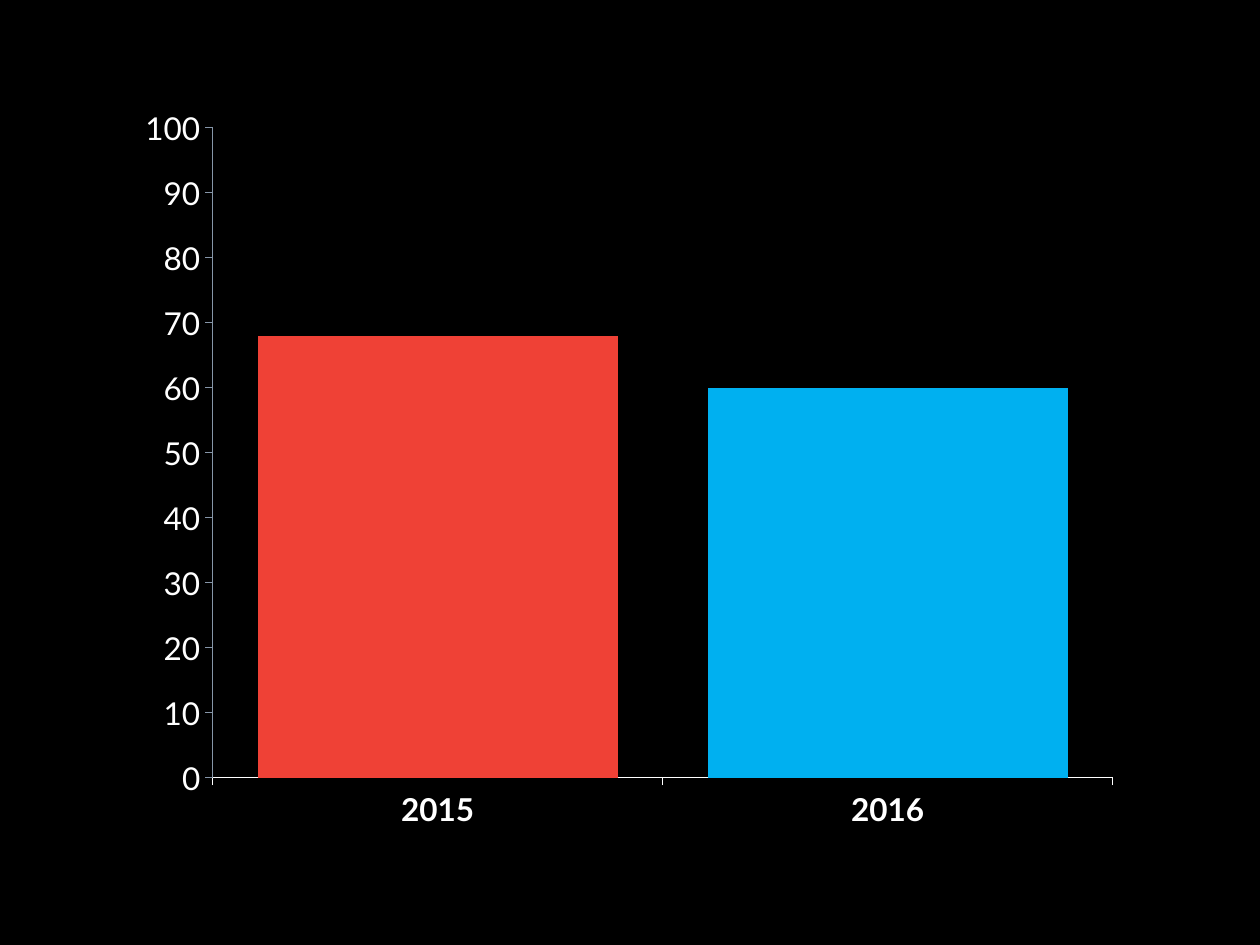
from lxml.etree import SubElement, Element
from pptx import Presentation
from pptx.chart.data import CategoryChartData as Data
from pptx.dml.color import RGBColor
from pptx.enum.chart import XL_CHART_TYPE as Kind, XL_TICK_MARK as Tick
from pptx.oxml.ns import qn
from pptx.util import Pt

PX = 914400 // 126
WHITE, BLACK, RED, BLUE, GREY = "FFFFFF", "000000", "EF4136", "00B0F0", "8696A8"


def px(n):
    return round(n * PX)


def paint(fill, tone):
    fill.solid()
    fill.fore_color.rgb = RGBColor.from_string(tone)


def style(item, values):
    for name, value in values.items():
        setattr(item, name, value)


def set_font(font, bold=False):
    style(font, {"name": "Lato", "size": Pt(18), "bold": bold})
    font.color.rgb = RGBColor.from_string(WHITE)


def set_axis(axis, tone, bold, values):
    style(axis, {"has_major_gridlines": False, "major_tick_mark": Tick.OUTSIDE,
                 "minor_tick_mark": Tick.NONE, **values})
    set_font(axis.tick_labels.font, bold)
    axis.format.line.width = Pt(0.75)
    paint(axis.format.line.fill, tone)


def set_plot(chart, box):
    area = chart._chartSpace.chart.plotArea
    for old in area.findall(qn("c:layout")):
        area.remove(old)
    layout = Element(qn("c:layout"))
    area.insert(0, layout)
    manual = SubElement(layout, qn("c:manualLayout"))
    parts = {"layoutTarget": "inner", "xMode": "edge", "yMode": "edge", **box}
    for name, value in parts.items():
        SubElement(manual, qn("c:" + name)).set("val", str(value))


def add_bars(slide, years, scores, tones):
    data = Data()
    data.categories = years
    data.add_series("Series 1", scores)
    frame = slide.shapes.add_chart(
        Kind.COLUMN_CLUSTERED, px(126), px(94), px(1008), px(750), data)
    chart = frame.chart
    style(chart, {"has_legend": False, "has_title": False})
    set_font(chart.font)
    set_axis(chart.category_axis, WHITE, True, {})
    set_axis(chart.value_axis, GREY, False,
             {"minimum_scale": 0, "maximum_scale": 100, "major_unit": 10})
    plot = chart.plots[0]
    style(plot, {"gap_width": 25, "overlap": 100, "vary_by_categories": False})
    bars = plot.series[0]
    paint(bars.format.fill, tones[0])
    for i, tone in enumerate(tones[1:], 1):
        paint(bars.points[i].format.fill, tone)
    set_plot(chart, {"x": 0.086, "y": 0.045, "w": 0.893, "h": 0.867})


def main():
    deck = Presentation()
    style(deck, {"slide_width": px(1260), "slide_height": px(945)})
    slide = deck.slides.add_slide(deck.slide_layouts[6])
    paint(slide.background.fill, BLACK)
    add_bars(slide, ["2015", "2016"], [68, 60], [RED, BLUE])
    deck.save("out.pptx")


if __name__ == "__main__":
    main()
